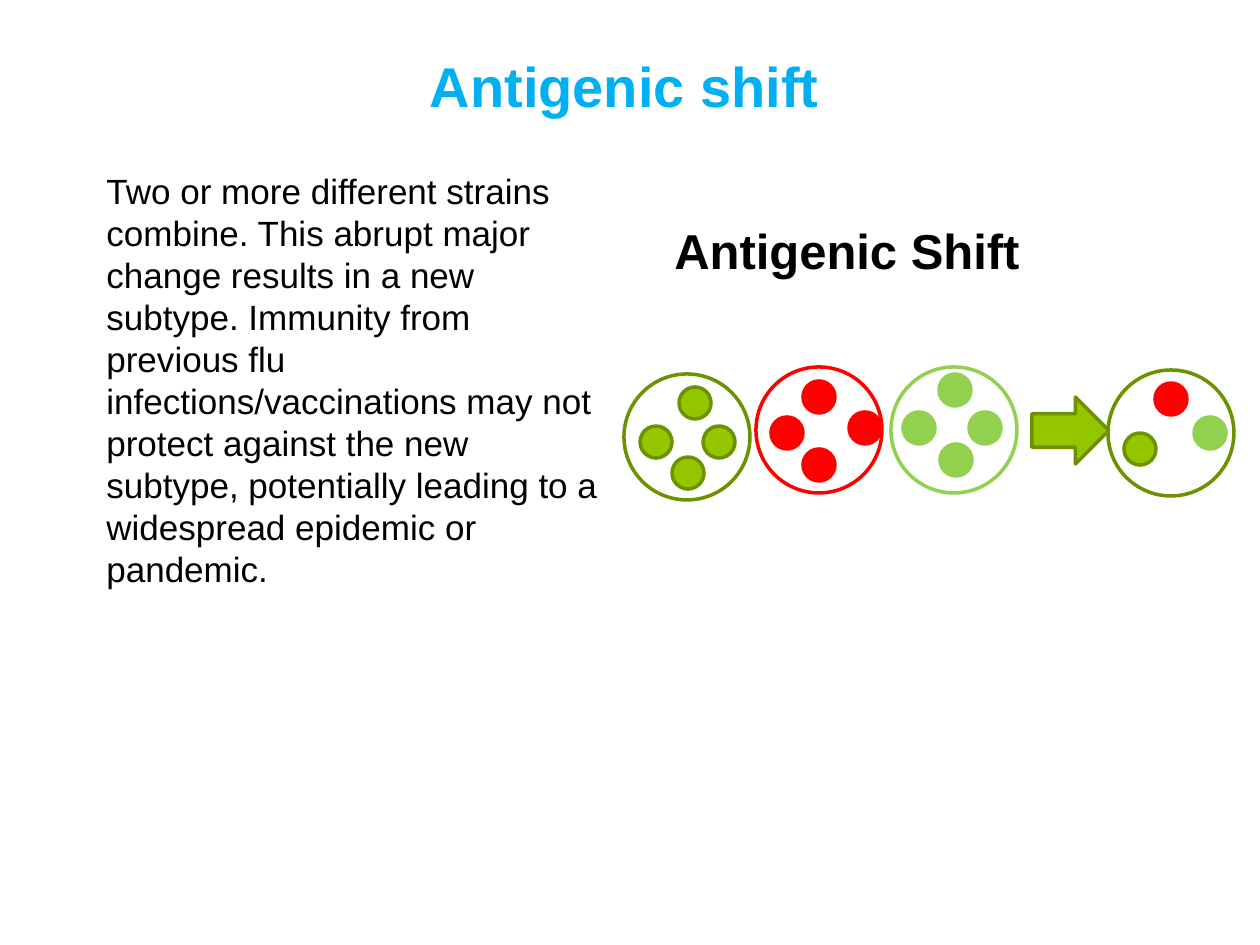
from pptx import Presentation
from pptx import util as u
from pptx.dml.color import RGBColor
from pptx.enum import shapes, text

PX = 914400 / 126
COLORS = {
    "title": "00B0F0", "text": "000000", "olive": "94C600",
    "dark olive": "6D9200", "red": "FF0000", "green": "92D050",
}
SHAPE = shapes.MSO_SHAPE


def add_text(content, left, top, width, height, size, color="text", bold=False,
             align=text.PP_ALIGN.LEFT, anchor=text.MSO_ANCHOR.TOP, spacing=None):
    box = slide.shapes.add_textbox(*[round(n * PX) for n in (left, top, width, height)])
    frame = box.text_frame
    frame.word_wrap = True
    frame.vertical_anchor = anchor
    paragraph = frame.paragraphs[0]
    paragraph.alignment = align
    paragraph.line_spacing = spacing
    run = paragraph.add_run()
    run.text = content
    run.font.name = "Arial"
    run.font.size = u.Pt(size)
    run.font.bold = bold
    run.font.color.rgb = RGBColor.from_string(COLORS[color])


def add_outlined(kind, left, top, width, height, line, fill=None):
    shape = slide.shapes.add_shape(kind, *[round(n * PX) for n in (left, top, width, height)])
    shape.shadow.inherit = False
    shape.line.color.rgb = RGBColor.from_string(COLORS[line])
    shape.line.width = u.Pt(2)
    if fill:
        shape.fill.solid()
        shape.fill.fore_color.rgb = RGBColor.from_string(COLORS[fill])
    else:
        shape.fill.background()


presentation = Presentation()
presentation.slide_width = u.Inches(10)
presentation.slide_height = u.Inches(7.5)
slide = presentation.slides.add_slide(presentation.slide_layouts[6])

add_text("Antigenic shift", 68, 6, 1113, 158, size=32, color="title", bold=True,
         align=text.PP_ALIGN.CENTER, anchor=text.MSO_ANCHOR.MIDDLE)
add_text("Two or more different strains combine. This abrupt major change results "
         "in a new subtype. Immunity from previous flu infections/vaccinations may "
         "not protect against the new subtype, potentially leading to a widespread "
         "epidemic or pandemic.", 94, 163, 528, 549, size=20, spacing=u.Pt(24))
add_text("Antigenic Shift", 662, 214, 546, 557, size=28, bold=True)

# Each virus: left, top, outline colour and its gene segments as (left, top, strain)
VIRUS, SEGMENT = 126, 32
STRAIN_LINES = {"olive": "dark olive", "red": "red", "green": "green"}
viruses = [
    (624, 374, "dark olive", [(640, 426, "olive"), (672, 457, "olive"),
                              (703, 426, "olive"), (679, 387, "olive")]),
    (756, 367, "red", [(771, 417, "red"), (803, 449, "red"),
                       (849, 412, "red"), (803, 381, "red")]),
    (891, 367, "green", [(903, 412, "green"), (940, 444, "green"),
                         (969, 412, "green"), (939, 374, "green")]),
    (1108, 370, "dark olive", [(1155, 383, "red"), (1124, 433, "olive"),
                               (1194, 417, "green")]),
]
add_outlined(SHAPE.RIGHT_ARROW, 1032, 397, 77, 67, line="dark olive", fill="olive")
for left, top, outline, segments in viruses:
    add_outlined(SHAPE.OVAL, left, top, VIRUS, VIRUS, line=outline)
    for segment_left, segment_top, strain in segments:
        add_outlined(SHAPE.FLOWCHART_CONNECTOR, segment_left, segment_top,
                     SEGMENT, SEGMENT, line=STRAIN_LINES[strain], fill=strain)

presentation.save("out.pptx")
